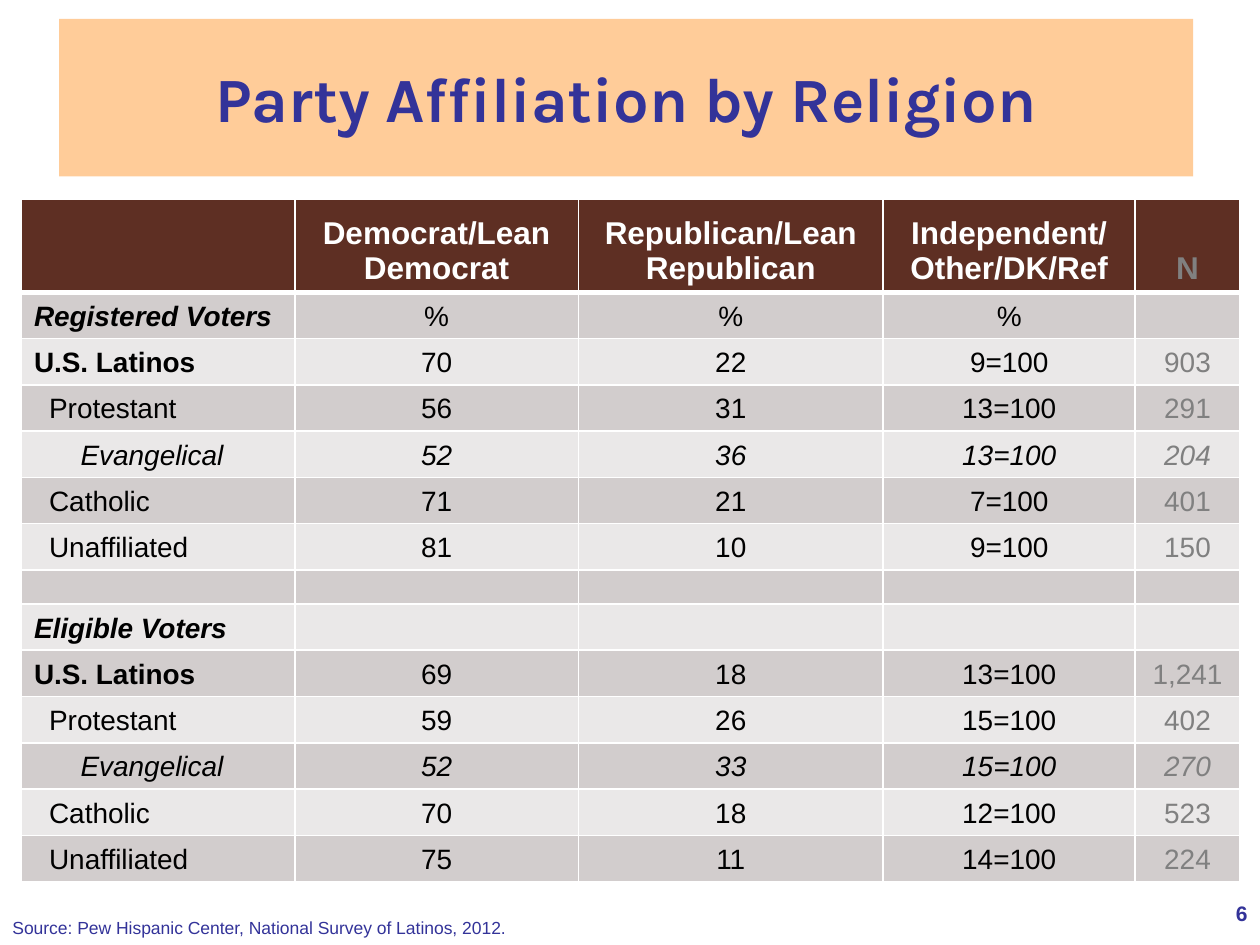
from lxml import etree
from pptx import Presentation
from pptx.dml.color import RGBColor
from pptx.enum import shapes, text
from pptx.oxml import ns
from pptx.util import Inches, Pt

HUES = {"navy": "333399", "peach": "FFCC99", "brown": "5E2F23", "dark": "D2CDCD",
        "light": "EAE8E8", "white": "FFFFFF", "gray": "808080", "black": "000000"}
TITLE = "Party Affiliation by Religion"
SOURCE = "Source: Pew Hispanic Center, National Survey of Latinos, 2012."
PAGE = "6"
HEAD = ("", "Democrat/Lean Democrat", "Republican/Lean Republican",
        "Independent/\nOther/DK/Ref", "N")
ROWS = [
    ("Registered Voters", "%", "%", "%", ""),
    ("U.S. Latinos", "70", "22", "9=100", "903"),
    ("Protestant", "56", "31", "13=100", "291"),
    ("Evangelical", "52", "36", "13=100", "204"),
    ("Catholic", "71", "21", "7=100", "401"),
    ("Unaffiliated", "81", "10", "9=100", "150"),
    ("", "", "", "", ""),
    ("Eligible Voters", "", "", "", ""),
    ("U.S. Latinos", "69", "18", "13=100", "1,241"),
    ("Protestant", "59", "26", "15=100", "402"),
    ("Evangelical", "52", "33", "15=100", "270"),
    ("Catholic", "70", "18", "12=100", "523"),
    ("Unaffiliated", "75", "11", "14=100", "224"),
]
INDENT = {"Protestant": 0.12, "Catholic": 0.12, "Unaffiliated": 0.12, "Evangelical": 0.37}
WIDTHS = (2.17, 2.25, 2.42, 2, 0.83)
LEFT, TOP, HIGH = 0.17, 1.58, 5.42
HEAD_H, GAP_H = 0.74, 0.27
ROW_H = (HIGH - HEAD_H - GAP_H) / (len(ROWS) - 1)
ALIGN = text.PP_ALIGN


def color(name):
    return RGBColor.from_string(HUES[name])


def write(frame, words, size, hue, align=ALIGN.LEFT, bold=False, italic=False, face="Arial"):
    frame.text = words
    for para in frame.paragraphs:
        para.alignment = align
        font = para.font
        font.name, font.size, font.bold, font.italic = face, Pt(size), bold, italic
        font.color.rgb = color(hue)


def border(cell, top, bottom):
    props = cell._tc.get_or_add_tcPr()
    for side, width in (("L", 1), ("R", 1), ("T", top), ("B", bottom)):
        line = etree.SubElement(props, ns.qn("a:ln" + side), w=str(Pt(width)))
        fill = etree.SubElement(line, ns.qn("a:solidFill"))
        etree.SubElement(fill, ns.qn("a:srgbClr"), val=HUES["white"])


def fill_cell(cell, words, row, col):
    border(cell, 3 if row == 1 else 1, 3 if row == 0 else 1)
    cell.fill.solid()
    cell.fill.fore_color.rgb = color("brown" if row == 0 else "dark" if row % 2 else "light")
    cell.vertical_anchor = text.MSO_ANCHOR.BOTTOM
    cell.margin_left = Inches(0.1 + INDENT.get(words, 0))
    if not words:
        para = cell.text_frame.paragraphs[0]._p
        etree.SubElement(para, ns.qn("a:endParaRPr"), sz="1000")
        return
    name = ROWS[row - 1][0] if row else ""
    group = col == 0 and name.endswith("Voters")
    hue = "gray" if col == 4 else "black" if row else "white"
    write(cell.text_frame, words, 16 if row else 18, hue,
          ALIGN.CENTER if col else ALIGN.LEFT,
          bold=row == 0 or group or words == "U.S. Latinos",
          italic=group or name == "Evangelical")


def main():
    deck = Presentation()
    deck.slide_width, deck.slide_height = Inches(10), Inches(7.5)
    slide = deck.slides.add_slide(deck.slide_layouts[6])

    banner = slide.shapes.add_shape(shapes.MSO_SHAPE.RECTANGLE, Inches(0.47), Inches(0.15),
                                    Inches(9), Inches(1.25))
    banner.shadow.inherit = False
    banner.fill.solid()
    banner.fill.fore_color.rgb = color("peach")
    banner.line.fill.background()
    banner.text_frame.vertical_anchor = text.MSO_ANCHOR.MIDDLE
    write(banner.text_frame, TITLE, 36, "navy", ALIGN.CENTER, bold=True, face="Karla")

    note = slide.shapes.add_textbox(0, Inches(7.23), Inches(4.15), Inches(0.27))
    note.text_frame.word_wrap = False
    write(note.text_frame, SOURCE, 10, "navy")

    page = slide.shapes.add_textbox(Inches(7.67), Inches(7.1), Inches(2.33), Inches(0.4))
    page.text_frame.word_wrap = True
    write(page.text_frame, PAGE, 12, "navy", ALIGN.RIGHT, bold=True)

    lines = [HEAD] + ROWS
    table = slide.shapes.add_table(len(lines), len(HEAD), Inches(LEFT), Inches(TOP),
                                   Inches(sum(WIDTHS)), Inches(HIGH)).table
    for column, width in zip(table.columns, WIDTHS):
        column.width = Inches(width)
    for row, line in enumerate(lines):
        high = HEAD_H if row == 0 else ROW_H if any(line) else GAP_H
        table.rows[row].height = Inches(high)
        for col, words in enumerate(line):
            fill_cell(table.cell(row, col), words, row, col)

    deck.save("out.pptx")


if __name__ == "__main__":
    main()
